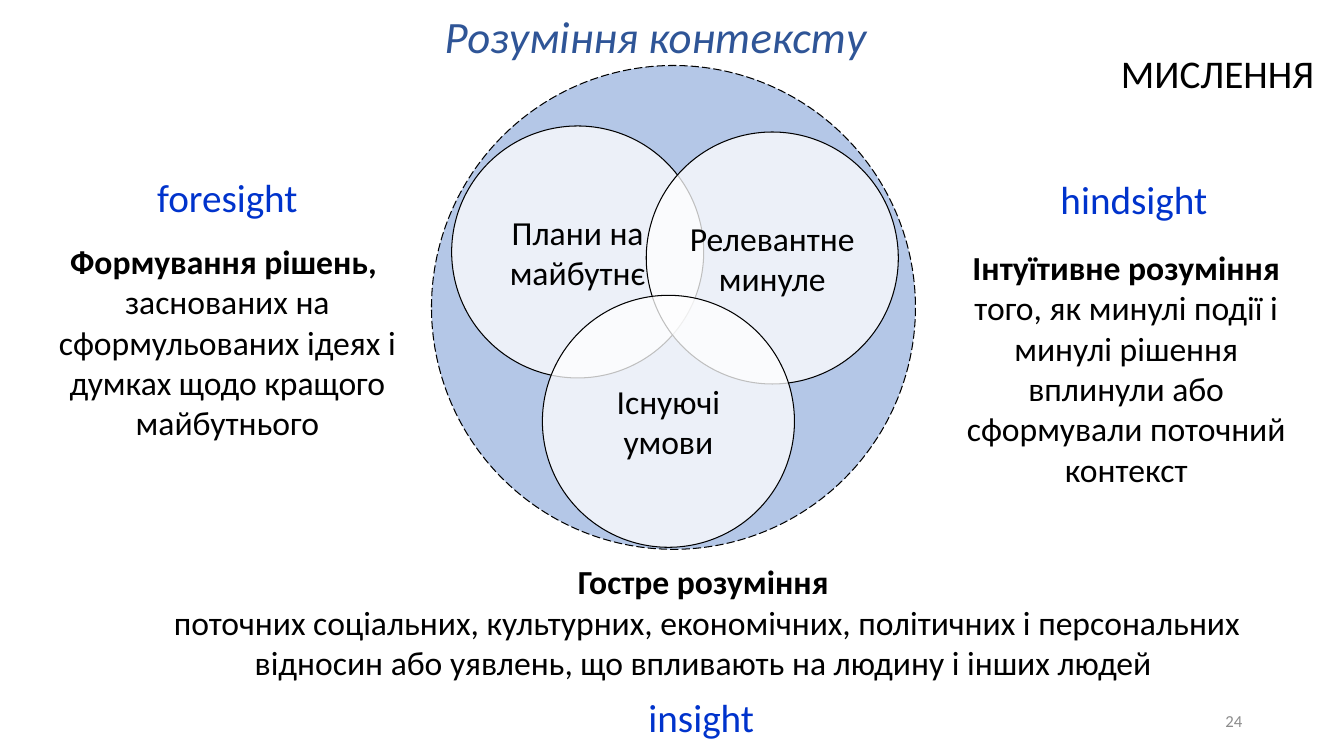
from dataclasses import dataclass

from lxml import etree
from pptx import Presentation
from pptx.dml.color import RGBColor
from pptx.enum.dml import MSO_LINE
from pptx.enum.shapes import MSO_SHAPE
from pptx.enum.text import MSO_ANCHOR, PP_ALIGN
from pptx.oxml.ns import qn
from pptx.util import Inches, Pt

OVAL = MSO_SHAPE.OVAL
LONG_DASH = MSO_LINE.LONG_DASH
TOP, MIDDLE = MSO_ANCHOR.TOP, MSO_ANCHOR.MIDDLE
LEFT, CENTER, RIGHT = PP_ALIGN.LEFT, PP_ALIGN.CENTER, PP_ALIGN.RIGHT

BLACK = RGBColor(0x00, 0x00, 0x00)
WHITE = RGBColor(0xFF, 0xFF, 0xFF)
PALE_BLUE = RGBColor(0xB4, 0xC7, 0xE7)
TITLE_BLUE = RGBColor(0x2F, 0x55, 0x97)
TERM_BLUE = RGBColor(0x00, 0x33, 0xCC)
GREY = RGBColor(0x8C, 0x8C, 0x8C)

FONT = "Calibri"
CIRCLE_SIZE = 2.5
CIRCLE_OPACITY = 75


@dataclass(frozen=True)
class Run:
    text: str
    bold: bool = False


@dataclass(frozen=True)
class Circle:
    left: float
    top: float
    text: str


@dataclass(frozen=True)
class Label:
    box: tuple[float, float, float, float]
    paragraphs: list[list[Run]]
    size: int = 24
    color: RGBColor = BLACK
    align: PP_ALIGN = CENTER
    anchor: MSO_ANCHOR = TOP


CIRCLES = [
    Circle(4.48, 1.25, "Плани на майбутнє"),
    Circle(6.41, 1.31, "Релевантне минуле"),
    Circle(5.38, 2.93, "Існуючі умови"),
]

LABELS = [
    Label((10.82, 0.44, 2.51, 0.57), [[Run("МИСЛЕННЯ")]], 28),
    Label((9.28, 2.4, 3.78, 2.52), [[
        Run("Інтуїтивне розуміння ", True),
        Run("того, як минулі події і минулі рішення вплинули або "
            "сформували поточний контекст"),
    ]]),
    Label((-0.04, 2.34, 4.59, 2.12), [
        [Run("Формування рішень, ", True)],
        [Run("заснованих на сформульованих ідеях і думках щодо кращого "
             "майбутнього")],
    ]),
    Label((1.39, 5.52, 11.17, 1.31), [
        [Run("Гостре розуміння", True)],
        [Run(" поточних соціальних, культурних, економічних, політичних і "
             "персональних відносин або уявлень, що впливають на людину і "
             "інших людей")],
    ]),
    Label((10.42, 1.69, 2.2, 0.57), [[Run("hindsight")]], 28, TERM_BLUE, LEFT),
    Label((6.25, 6.83, 1.41, 0.57), [[Run("insight")]], 28, TERM_BLUE),
    Label((1.05, 1.67, 2.41, 0.57), [[Run("foresight")]], 28, TERM_BLUE),
    Label((9.42, 6.95, 3, 0.4), [[Run("24")]], 12, GREY, RIGHT, MIDDLE),
]


def set_attrs(target, values: dict) -> None:
    """Set each named attribute on the target."""
    for name, value in values.items():
        setattr(target, name, value)


def write(p, runs: list[Run], size: int, color: RGBColor, align: PP_ALIGN,
          italic: bool = False) -> None:
    """Fill a paragraph with formatted runs."""
    p.alignment = align
    for run in runs:
        r = p.add_run()
        r.text = run.text
        set_attrs(r.font, {"name": FONT, "size": Pt(size), "bold": run.bold,
                           "italic": italic})
        r.font.color.rgb = color


def add_oval(s, left: float, top: float, size: float, fill: RGBColor):
    """Draw a thin outlined circle without a shadow."""
    sp = s.shapes.add_shape(OVAL, *map(Inches, (left, top, size, size)))
    sp.shadow.inherit = False
    sp.fill.solid()
    sp.fill.fore_color.rgb = fill
    sp.line.color.rgb = BLACK
    sp.line.width = Pt(0.75)
    return sp


def add_circle(s, circle: Circle) -> None:
    """Draw a translucent circle with its caption."""
    sp = add_oval(s, circle.left, circle.top, CIRCLE_SIZE, WHITE)
    color = sp._element.spPr.find(qn("a:solidFill")).find(qn("a:srgbClr"))
    etree.SubElement(color, qn("a:alpha"), val=str(CIRCLE_OPACITY * 1000))
    tf = sp.text_frame
    set_attrs(tf, {"word_wrap": True, "vertical_anchor": MIDDLE,
                   "margin_left": 0, "margin_right": 0,
                   "margin_top": 0, "margin_bottom": 0})
    write(tf.paragraphs[0], [Run(circle.text)], 24, BLACK, CENTER)


def add_label(s, label: Label) -> None:
    """Place a text box with its paragraphs."""
    tf = s.shapes.add_textbox(*map(Inches, label.box)).text_frame
    set_attrs(tf, {"word_wrap": True, "vertical_anchor": label.anchor})
    for i, runs in enumerate(label.paragraphs):
        p = tf.add_paragraph() if i else tf.paragraphs[0]
        write(p, runs, label.size, label.color, label.align)


def add_title(s, text: str) -> None:
    """Move and format the title placeholder."""
    title = s.shapes.title
    set_attrs(title, {"left": Inches(4.31), "top": Inches(-0.24),
                      "width": Inches(6.24), "height": Inches(1.25)})
    tf = title.text_frame
    set_attrs(tf, {"word_wrap": True, "vertical_anchor": MIDDLE})
    p = tf.paragraphs[0]
    p.line_spacing = 0.9
    write(p, [Run(text)], 32, TITLE_BLUE, LEFT, italic=True)


def main() -> None:
    """Build the slide and save it."""
    prs = Presentation()
    prs.slide_width, prs.slide_height = Inches(13.33), Inches(7.5)
    s = prs.slides.add_slide(prs.slide_layouts[5])
    add_title(s, "Розуміння контексту")
    context = add_oval(s, 4.28, 0.65, 4.8, PALE_BLUE)
    context.line.dash_style = LONG_DASH
    for circle in CIRCLES:
        add_circle(s, circle)
    for label in LABELS:
        add_label(s, label)
    prs.save("out.pptx")


if __name__ == "__main__":
    main()
